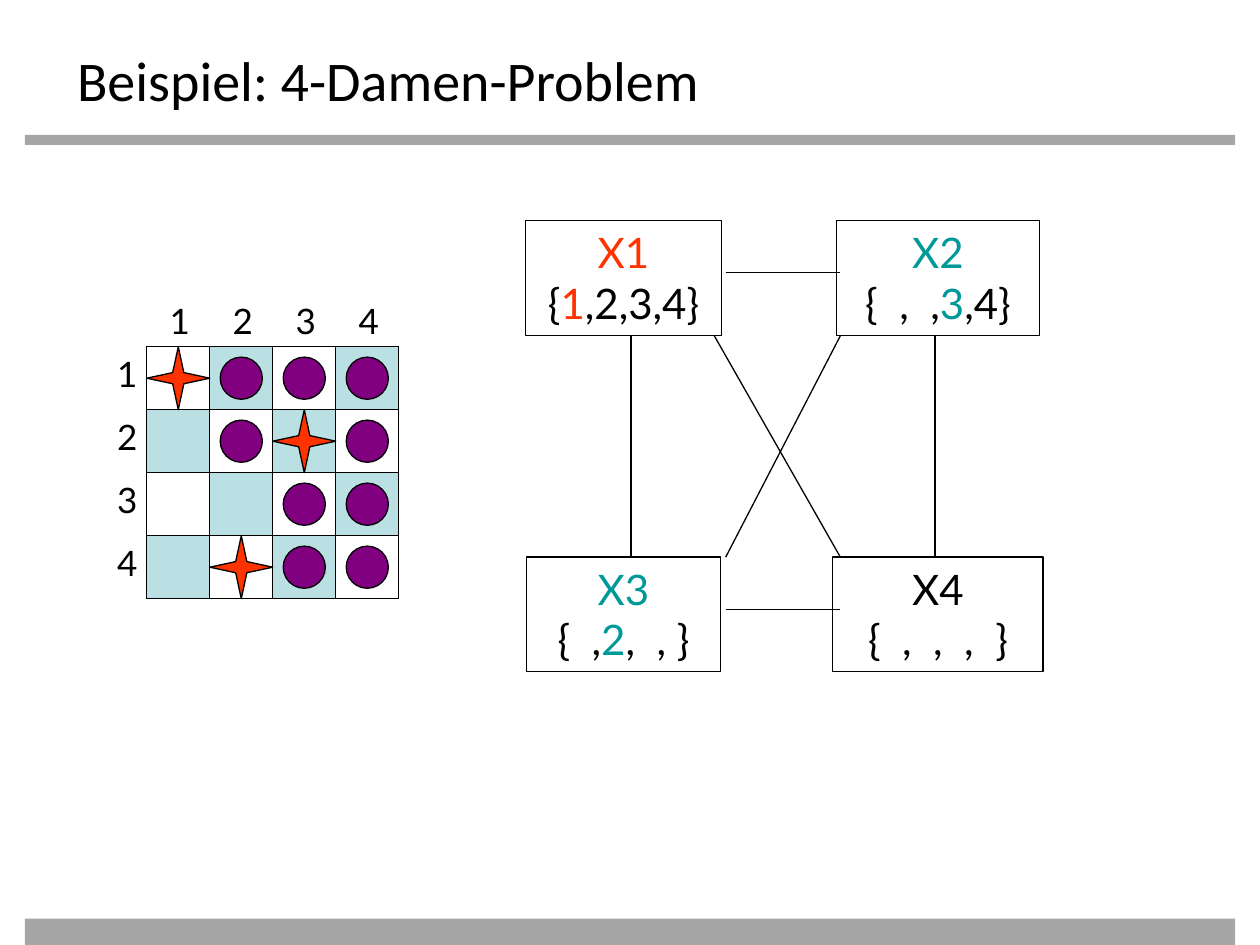
from typing import NamedTuple

from lxml import etree
from pptx import Presentation
from pptx import util as u
from pptx.dml.color import RGBColor
from pptx.enum import shapes, text
from pptx.oxml import ns

BLACK = RGBColor(0x00, 0x00, 0x00)
GREY = RGBColor(0xA6, 0xA6, 0xA6)
PALE_BLUE = RGBColor(0xBB, 0xE0, 0xE3)
RED = RGBColor(0xFF, 0x33, 0x00)
TEAL = RGBColor(0x00, 0x99, 0x99)
PURPLE = RGBColor(0x80, 0x00, 0x80)

RECT = shapes.MSO_SHAPE.RECTANGLE
LEFT, CENTER = text.PP_ALIGN.LEFT, text.PP_ALIGN.CENTER
LINE_WIDTH = u.Pt(0.75)


class Area(NamedTuple):
    left: float
    top: float
    width: float
    height: float

    def lengths(self) -> list[u.Cm]:
        return [u.Cm(value) for value in self]


class Span(NamedTuple):
    words: str
    color: RGBColor = BLACK


class Variable(NamedTuple):
    center: float
    top: float
    width: float
    name: Span
    domain: list[Span]


class Edge(NamedTuple):
    x1: float
    y1: float
    x2: float
    y2: float


def add_figure(parent, kind, area: Area, fill=None, outlined=True):
    figure = parent.add_shape(kind, *area.lengths())
    figure.shadow.inherit = False
    if fill is None:
        figure.fill.background()
    else:
        figure.fill.solid()
        figure.fill.fore_color.rgb = fill
    if outlined:
        figure.line.color.rgb = BLACK
        figure.line.width = LINE_WIDTH
    else:
        figure.line.fill.background()
    return figure


def write(box, lines: list[list[Span]], size: float, align) -> None:
    frame = box.text_frame
    frame_format = {"word_wrap": False, "vertical_anchor": text.MSO_ANCHOR.TOP,
                    "auto_size": text.MSO_AUTO_SIZE.SHAPE_TO_FIT_TEXT}
    for name, value in frame_format.items():
        setattr(frame, name, value)
    for index, spans in enumerate(lines):
        para = frame.add_paragraph() if index else frame.paragraphs[0]
        para.alignment = align
        for span in spans:
            run = para.add_run()
            run.text = span.words
            for name, value in {"name": "Lato", "size": u.Pt(size)}.items():
                setattr(run.font, name, value)
            run.font.color.rgb = span.color


def add_label(parent, left: float, top: float, words: str) -> None:
    box = parent.add_textbox(*Area(left, top, 0.88, 1.11).lengths())
    write(box, [[Span(words)]], 20, LEFT)


def add_variable(parent, variable: Variable) -> None:
    area = Area(variable.center - variable.width / 2, variable.top, variable.width, 2.31)
    box = add_figure(parent, RECT, area)
    write(box, [[variable.name], variable.domain], 24, CENTER)


def add_edge(parent, edge: Edge) -> None:
    line = parent.add_connector(shapes.MSO_CONNECTOR.STRAIGHT, *[u.Cm(v) for v in edge])
    line.line.color.rgb = BLACK
    line.line.width = LINE_WIDTH
    etree.SubElement(line._element.spPr, ns.qn("a:effectLst"))


deck = Presentation()
deck.slide_width, deck.slide_height = u.Cm(25.4), u.Cm(19.05)
page = deck.slides.add_slide(deck.slide_layouts[5])

# Grey bars
for bar in (Area(0.5, 2.72, 24.4, 0.2), Area(0.5, 18.52, 24.4, 0.53)):
    add_figure(page.shapes, RECT, bar, GREY, outlined=False)

# Title
title = page.shapes.title
title.left, title.top, title.width, title.height = Area(1.3, 0.71, 22.86, 1.4).lengths()
title.text_frame.text = "Beispiel: 4-Damen-Problem"
title_frame = {"vertical_anchor": text.MSO_ANCHOR.TOP, "word_wrap": True,
               "auto_size": text.MSO_AUTO_SIZE.NONE, "margin_top": u.Cm(0.2)}
for key, setting in title_frame.items():
    setattr(title.text_frame, key, setting)
heading = title.text_frame.paragraphs[0]
heading.alignment = LEFT
for key, setting in {"name": "Calibri", "size": u.Pt(32)}.items():
    setattr(heading.runs[0].font, key, setting)
heading.runs[0].font.color.rgb = BLACK

# Chessboard: Q is a queen, x an attacked square
SQUARE, DOT = 1.27, 0.85
BOARD_LEFT, BOARD_TOP = 2.96, 6.99
POSITION = ["Qxxx", " xQx", "  xx", " Qxx"]
count = len(POSITION)
board = page.shapes.add_group_shape().shapes
add_figure(board, RECT, Area(BOARD_LEFT, BOARD_TOP, count * SQUARE, count * SQUARE))
gap = (SQUARE - DOT) / 2
for row in range(count):
    top = BOARD_TOP + row * SQUARE
    for column in range(count):
        if (row + column) % 2:
            left = BOARD_LEFT + column * SQUARE
            add_figure(board, RECT, Area(left, top, SQUARE, SQUARE), PALE_BLUE)
    add_label(board, 2.11, top, str(row + 1))
    add_label(board, BOARD_LEFT + gap + row * SQUARE, 5.92, str(row + 1))

# Constraint graph
UPPER, LOWER = 4.45, 11.23
WEST, EAST = 12.57, 18.91
VARIABLES = [
    Variable(WEST, UPPER, 3.96, Span("X1", RED),
             [Span("{"), Span("1", RED), Span(",2,3,4}")]),
    Variable(WEST, LOWER, 3.91, Span("X3", TEAL),
             [Span("{  ,"), Span("2", TEAL), Span(",  , }")]),
    Variable(EAST, LOWER, 4.24, Span("X4"), [Span("{  ,  ,  ,  }")]),
    Variable(EAST, UPPER, 4.09, Span("X2", TEAL),
             [Span("{  ,  ,"), Span("3", TEAL), Span(",4}")]),
]
UPPER_END = 6.77
EDGES = [
    Edge(14.63, 5.5, 16.94, 5.5),
    Edge(12.72, UPPER_END, 12.72, LOWER),
    Edge(14.63, 12.28, 16.94, 12.28),
    Edge(18.85, UPPER_END, 18.85, LOWER),
    Edge(14.4, UPPER_END, 16.94, LOWER),
    Edge(16.94, UPPER_END, 14.63, LOWER),
]
graph = page.shapes.add_group_shape().shapes
for variable in VARIABLES:
    add_variable(graph, variable)
for edge in EDGES:
    add_edge(graph, edge)

# Queens and attacked squares
for row, marks in enumerate(POSITION):
    for column, mark in enumerate(marks):
        left, top = BOARD_LEFT + column * SQUARE, BOARD_TOP + row * SQUARE
        if mark == "Q":
            queen = add_figure(page.shapes, shapes.MSO_SHAPE.STAR_4_POINT,
                               Area(left, top, SQUARE, SQUARE), RED)
            queen.adjustments[0] = 0.125
        elif mark == "x":
            add_figure(page.shapes, shapes.MSO_SHAPE.OVAL,
                       Area(left + gap, top + gap, DOT, DOT), PURPLE)

deck.save("out.pptx")
